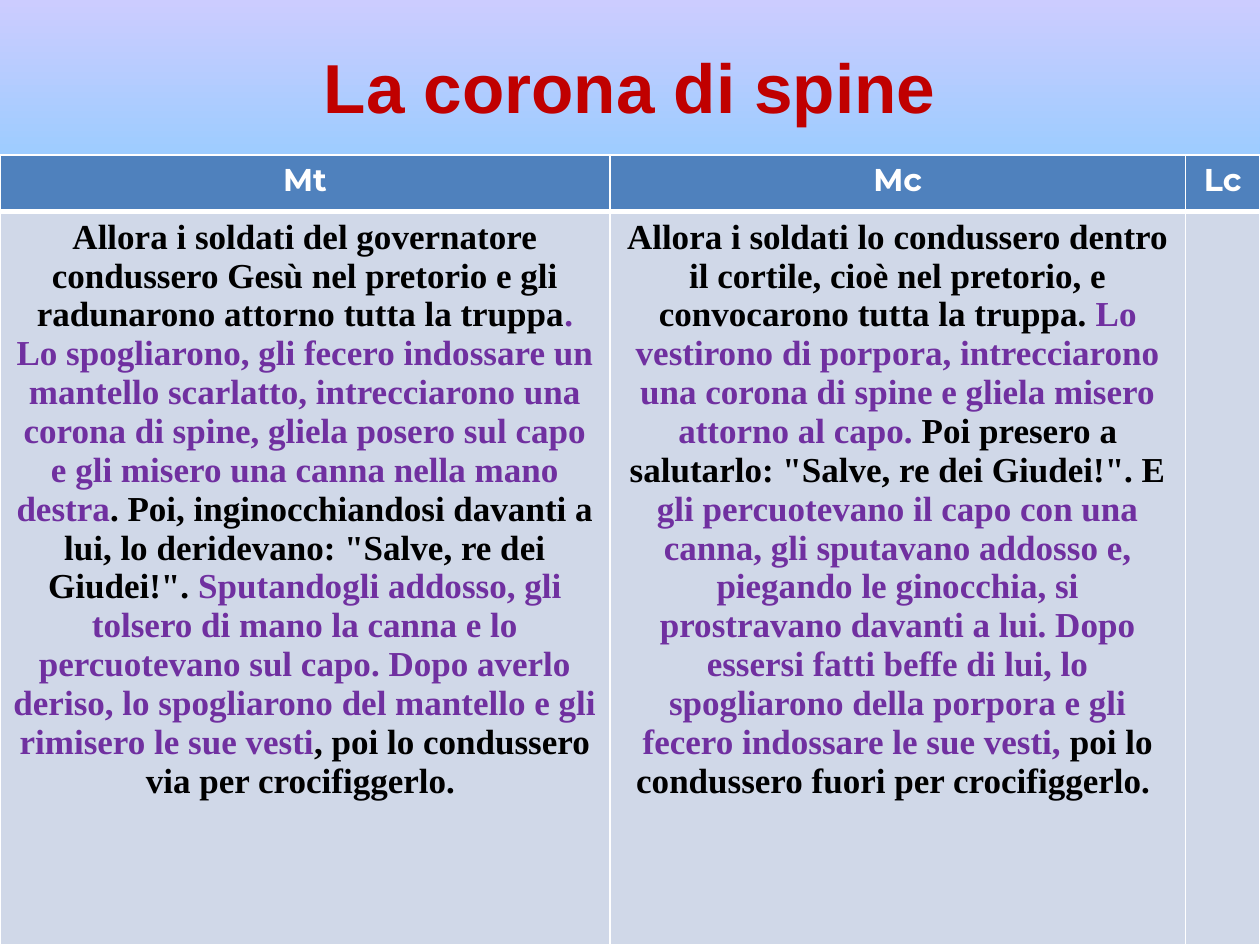
import pptx
import pptx.dml.color
import pptx.enum.text
import pptx.oxml
import pptx.oxml.ns
import pptx.util
from pptx.util import Inches

COLORS = {"title": "C00000", "header": "4F81BD", "body": "D0D8E8", "line": "FFFFFF",
          "header_text": "FFFFFF", "plain": "000000", "accent": "7030A0"}
GRADIENT = [(0, "CCCCFF"), (18, "99CCFF"), (36, "9966FF"),
            (61, "CC99FF"), (82, "99CCFF"), (100, "CCCCFF")]
FONTS = {
    "title": {"name": "Arial", "size": pptx.util.Pt(39.6), "bold": True},
    "header": {"name": "Montserrat", "size": pptx.util.Pt(18), "bold": True},
    "body": {"name": "Times New Roman", "size": pptx.util.Pt(20), "bold": True},
}
COLUMN_WIDTHS = [4.84, 4.57, 0.59]
ROW_HEIGHTS = [0.45, 5.82]
HEADERS = ["Mt", "Mc", "Lc"]
# Runs of each gospel passage: (colour name, text)
PASSAGES = [
    [("plain", "Allora i soldati del governatore condussero Gesù nel pretorio e gli "
               "radunarono attorno tutta la truppa"),
     ("accent", ". Lo spogliarono, gli fecero indossare un mantello scarlatto, "
                "intrecciarono una corona di spine, gliela posero sul capo e gli misero "
                "una canna nella mano destra"),
     ("plain", '. Poi, inginocchiandosi davanti a lui, lo deridevano: "Salve, re dei Giudei!". '),
     ("accent", "Sputandogli addosso, gli tolsero di mano la canna e lo percuotevano sul "
                "capo. Dopo averlo deriso, lo spogliarono del mantello e gli rimisero le "
                "sue vesti"),
     ("plain", ", poi lo condussero via per crocifiggerlo. ")],
    [("plain", "Allora i soldati lo condussero dentro il cortile, cioè nel pretorio, e "
               "convocarono tutta la truppa. "),
     ("accent", "Lo vestirono di porpora, intrecciarono una corona di spine e gliela "
                "misero attorno al capo."),
     ("plain", ' Poi presero a salutarlo: "Salve, re dei Giudei!". E '),
     ("accent", "gli percuotevano il capo con una canna, gli sputavano addosso e, piegando "
                "le ginocchia, si prostravano davanti a lui. Dopo essersi fatti beffe di "
                "lui, lo spogliarono della porpora e gli fecero indossare le sue vesti, "),
     ("plain", "poi lo condussero fuori per crocifiggerlo. ")],
    [],
]


def rgb(name):
    return pptx.dml.color.RGBColor.from_string(COLORS[name])


def write_runs(tf, runs, font):
    p = tf.paragraphs[0]
    p.alignment = pptx.enum.text.PP_ALIGN.CENTER
    for color, text in runs:
        r = p.add_run()
        r.text = text
        for key, value in FONTS[font].items():
            setattr(r.font, key, value)
        r.font.color.rgb = rgb(color)


def set_background(s):
    fill = s.background.fill
    fill.gradient()
    grad = s.background._cSld.find(".//" + pptx.oxml.ns.qn("a:gradFill"))
    stops = "".join(f'<a:gs pos="{pos * 1000}"><a:srgbClr val="{color}"/></a:gs>'
                    for pos, color in GRADIENT)
    new_grad = pptx.oxml.parse_xml(
        f'<a:gradFill {pptx.oxml.ns.nsdecls("a")} rotWithShape="1"><a:gsLst>{stops}</a:gsLst>'
        '<a:lin ang="5400000" scaled="1"/></a:gradFill>')
    grad.getparent().replace(grad, new_grad)


def add_title(s, left, top, width, height):
    sp = s.shapes.add_textbox(left, top, width, height)
    tf = sp.text_frame
    tf.word_wrap = True
    tf.vertical_anchor = pptx.enum.text.MSO_ANCHOR.MIDDLE
    write_runs(tf, [("title", "La corona di spine")], "title")


def set_borders(cell, **widths):
    tc_pr = cell._tc.get_or_add_tcPr()
    for side in "LRTB":
        width = pptx.util.Pt(widths.get(side, 1))
        tc_pr.append(pptx.oxml.parse_xml(
            f'<a:ln{side} {pptx.oxml.ns.nsdecls("a")} w="{width}"><a:solidFill>'
            f'<a:srgbClr val="{COLORS["line"]}"/></a:solidFill></a:ln{side}>'))


def add_comparison(s, left, top, width, height):
    table = s.shapes.add_table(len(ROW_HEIGHTS), len(COLUMN_WIDTHS),
                               left, top, width, height).table
    for column, size in zip(table.columns, COLUMN_WIDTHS):
        column.width = Inches(size)
    for row, size in zip(table.rows, ROW_HEIGHTS):
        row.height = Inches(size)
    rows = [("header", [[("header_text", text)] for text in HEADERS], {"B": 3}),
            ("body", PASSAGES, {"T": 3})]
    for i, (kind, contents, borders) in enumerate(rows):
        for j, runs in enumerate(contents):
            cell = table.cell(i, j)
            set_borders(cell, **borders)
            cell.fill.solid()
            cell.fill.fore_color.rgb = rgb(kind)
            write_runs(cell.text_frame, runs, kind)


def main():
    prs = pptx.Presentation()
    prs.slide_width, prs.slide_height = Inches(10), Inches(7.5)
    s = prs.slides.add_slide(prs.slide_layouts[6])
    set_background(s)
    add_title(s, Inches(0.5), Inches(0.3), Inches(9), Inches(0.77))
    add_comparison(s, Inches(0), Inches(1.23), Inches(sum(COLUMN_WIDTHS)),
                   Inches(sum(ROW_HEIGHTS)))
    prs.save("out.pptx")


if __name__ == "__main__":
    main()
